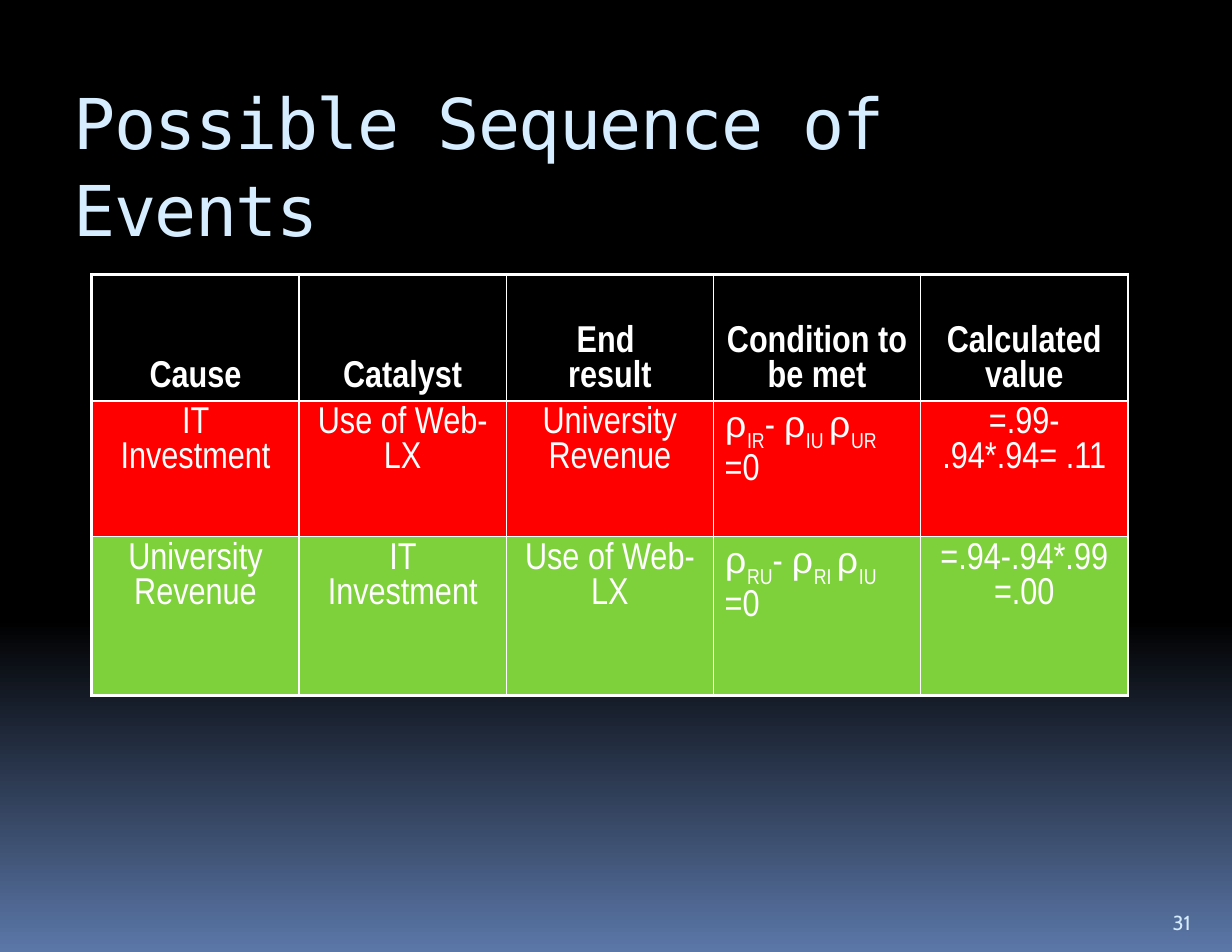
from lxml import etree
from pptx import Presentation
from pptx.dml.color import RGBColor
from pptx.enum.text import MSO_ANCHOR, MSO_AUTO_SIZE, PP_ALIGN
from pptx.oxml.ns import qn
from pptx.util import Inches, Pt

TOP, BOTTOM = MSO_ANCHOR.TOP, MSO_ANCHOR.BOTTOM
LEFT, CENTER = PP_ALIGN.LEFT, PP_ALIGN.CENTER
NARROW = "Arial Narrow"


def style(r, font, size, color, bold=False):
    r.font.name, r.font.size, r.font.bold = font, Pt(size), bold
    r.font.color.rgb = RGBColor.from_string(color)


def border(cell, side, width):
    ln = etree.SubElement(cell._tc.get_or_add_tcPr(), qn(f"a:ln{side}"), w=str(Pt(width)))
    fill = etree.SubElement(ln, qn("a:solidFill"))
    etree.SubElement(fill, qn("a:srgbClr"), val="FFFFFF")


prs = Presentation()
prs.slide_width, prs.slide_height = Inches(11), Inches(8.5)
W, H = prs.slide_width, prs.slide_height
s = prs.slides.add_slide(prs.slide_layouts[5])

bg = s.background.fill
bg.gradient()
bg.gradient_angle = 270
for stop, position, color in zip(bg.gradient_stops, (0.65, 1), ("000000", "5B77A8")):
    stop.position = position
    stop.color.rgb = RGBColor.from_string(color)

title = s.shapes.title
title.left, title.top = int(W * 0.05), Inches(0.63)
title.width, title.height = int(W * 0.9), Inches(1.13)
number = s.shapes.add_textbox(Inches(10.36), Inches(7.95), int(W * 0.05), Inches(0.45))
for sp, text, font, size, anchor in (
    (title, "Possible Sequence of Events", "DejaVu Sans Mono", 45, TOP),
    (number, "31", "Cabin", 13, BOTTOM),
):
    tf = sp.text_frame
    tf.text = text
    tf.word_wrap, tf.auto_size, tf.vertical_anchor = True, MSO_AUTO_SIZE.NONE, anchor
    tf.margin_left = tf.margin_right = Inches(0.11)
    tf.margin_top = tf.margin_bottom = Inches(0.06)
    p = tf.paragraphs[0]
    p.alignment = LEFT
    style(p.runs[0], font, size, "D6ECFF")
p = title.text_frame.paragraphs[0]
p.line_spacing = 1.03
p.runs[0].font._element.set("spc", "-110")

rows = [
    ("000000", 1.13, ["Cause", "Catalyst", "End \nresult", "Condition to be met", "Calculated value"]),
    ("FF0000", 1.21, ["IT Investment", "Use of Web-LX", "University Revenue",
                      ["ρ", "IR", "- ", "ρ", "IU ", "ρ", "UR ", "=0"], "=.99-.94*.94= .11"]),
    ("7FD13B", 1.42, ["University Revenue", "IT Investment", "Use of Web-LX",
                      ["ρ", "RU", "- ", "ρ", "RI ", "ρ", "IU ", "=0"], "=.94-.94*.99 =.00"]),
]
frame = s.shapes.add_table(3, 5, Inches(0.82), Inches(2.45), Inches(9.25), Inches(3.76))
table = frame.table
table.first_row = table.horz_banding = False
for col in table.columns:
    col.width = Inches(1.85)

for i, (color, height, texts) in enumerate(rows):
    table.rows[i].height = Inches(height)
    for j, text in enumerate(texts):
        cell = table.cell(i, j)
        for side, outer in (("L", j == 0), ("R", False), ("T", i == 0), ("B", i == 2)):
            border(cell, side, 2.25 if outer else 1)
        cell.fill.solid()
        cell.fill.fore_color.rgb = RGBColor.from_string(color)
        cell.vertical_anchor = BOTTOM if i == 0 else TOP
        p = cell.text_frame.paragraphs[0]
        p.space_before = Pt(4.8)
        if isinstance(text, str):
            p.text = text
            p.alignment = CENTER
        else:
            p.alignment = LEFT
            for part in text:
                r = p.add_run()
                r.text = part
        for r in p.runs:
            style(r, "Courier New" if r.text == "ρ" else NARROW, 24, "FFFFFF", i == 0)
            if j == 3 and i > 0 and r.text.strip().isalpha() and r.text != "ρ":
                r.font._element.set("baseline", "-30000")

prs.save("out.pptx")
